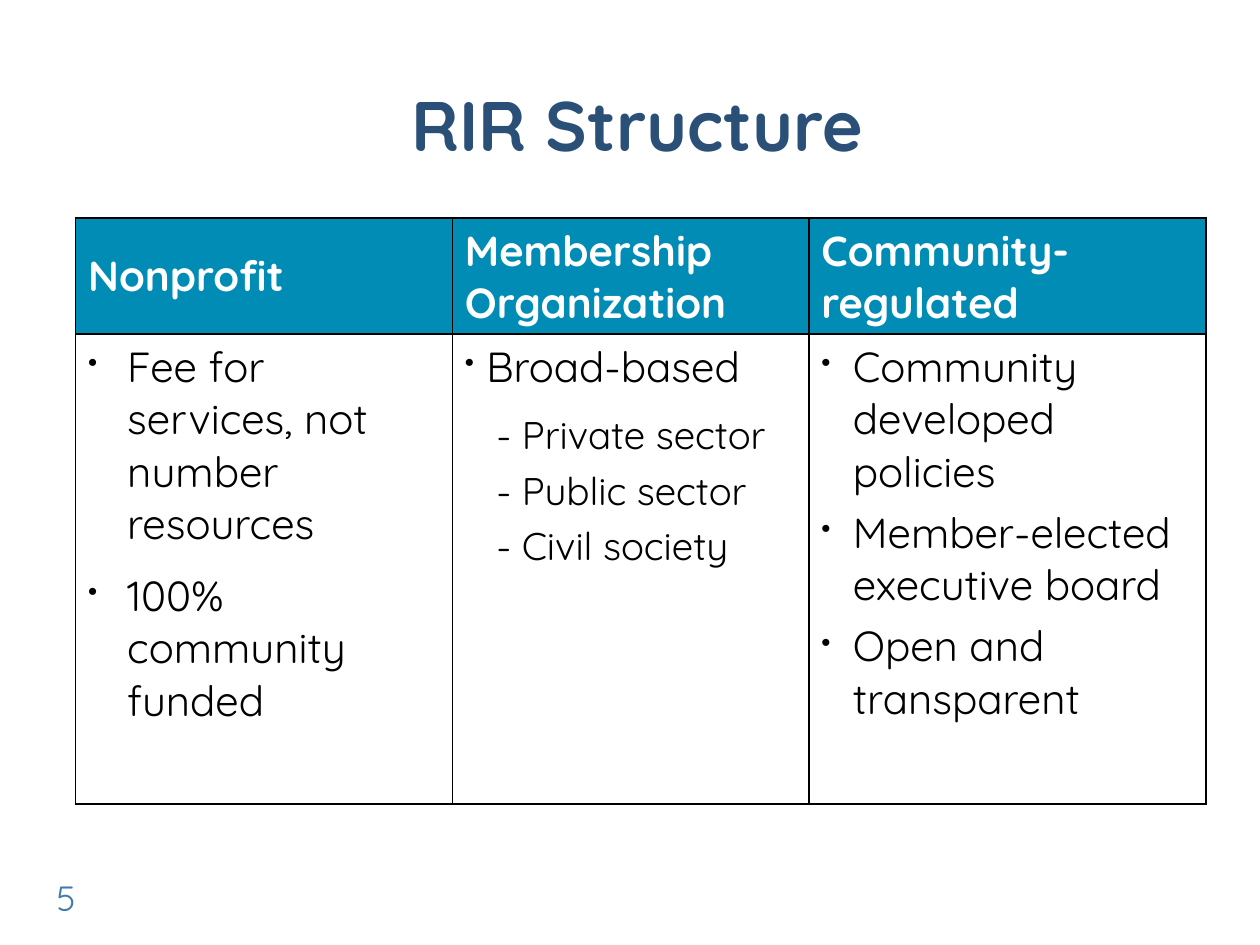
import pptx
import pptx.dml.color
import pptx.enum.text
import pptx.oxml.ns
import pptx.util
from lxml import etree

COLORS = {"title": "2B5078", "number": "407BAC", "header": "008CB5",
          "white": "FFFFFF", "black": "000000"}
HEADERS = ["Nonprofit", "Membership Organization", "Community-regulated"]
BODY = [
    [dict(text=t, hang=0.31, after=6, bullet=True) for t in
     ("Fee for services, not number resources", "100% community funded")],
    [dict(text="Broad-based", hang=0.17, after=6, bullet=True)]
    + [dict(text=f"- {t}", size=22, left=0.25) for t in
       ("Private sector", "Public sector", "Civil society")],
    [dict(text=t, hang=0.25, bullet=True) for t in
     ("Community developed policies", "Member-elected executive board",
      "Open and transparent")],
]


class Deck:
    """Style and current slide, measured on a grid of 100 columns by 75 rows."""

    font = "Quicksand"

    def __init__(self):
        self.prs = pptx.Presentation()
        self.prs.slide_width = pptx.util.Inches(10)
        self.prs.slide_height = pptx.util.Inches(7.5)
        self.s = self.prs.slides.add_slide(self.prs.slide_layouts[6])

    def cols(self, n):
        return round(self.prs.slide_width * n / 100)

    def rows(self, n):
        return round(self.prs.slide_height * n / 75)

    def box(self, x, y, w, h):
        return self.cols(x), self.rows(y), self.cols(w), self.rows(h)

    def rgb(self, name):
        return pptx.dml.color.RGBColor.from_string(COLORS[name])

    def run(self, p, text, size, color, bold=False):
        r = p.add_run()
        r.text = text
        r.font.name = self.font
        r.font.size = pptx.util.Pt(size)
        r.font.bold = bold
        r.font.color.rgb = self.rgb(color)

    def text(self, at, text, size, color, bold=False, align="LEFT", anchor="TOP"):
        tf = self.s.shapes.add_textbox(*self.box(*at)).text_frame
        tf.word_wrap = True
        tf.vertical_anchor = pptx.enum.text.MSO_ANCHOR[anchor]
        p = tf.paragraphs[0]
        p.alignment = pptx.enum.text.PP_ALIGN[align]
        self.run(p, text, size, color, bold)

    def paragraph(self, tf, first, text, size=24, left=0, hang=0, after=0, bullet=False):
        p = tf.paragraphs[0] if first else tf.add_paragraph()
        pPr = p._p.get_or_add_pPr()
        pPr.set("marL", str(pptx.util.Inches(left + hang)))
        pPr.set("indent", str(-pptx.util.Inches(hang)))
        if bullet:
            for tag, key, value in (("a:buSzPct", "val", "65000"),
                                    ("a:buChar", "char", "•")):
                etree.SubElement(pPr, pptx.oxml.ns.qn(tag)).set(key, value)
        if not first:
            p.space_before = pptx.util.Pt(size * 0.2)
        p.space_after = pptx.util.Pt(after)
        self.run(p, text, size, "black")

    def borders(self, cell):
        tcPr = cell._tc.get_or_add_tcPr()
        for i, side in enumerate(("lnL", "lnR", "lnT", "lnB")):
            ln = etree.Element(pptx.oxml.ns.qn(f"a:{side}"), w=str(pptx.util.Pt(1)))
            fill = etree.SubElement(ln, pptx.oxml.ns.qn("a:solidFill"))
            etree.SubElement(fill, pptx.oxml.ns.qn("a:srgbClr"), val=COLORS["black"])
            tcPr.insert(i, ln)

    def table(self, x, y, widths, heights, headers, body):
        at = self.box(x, y, sum(widths), sum(heights))
        table = self.s.shapes.add_table(2, len(headers), *at).table
        table.first_row = table.horz_banding = False
        for row, h in zip(table.rows, heights):
            row.height = self.rows(h)
        for i, (w, header, items) in enumerate(zip(widths, headers, body)):
            table.columns[i].width = self.cols(w)
            head, cell = table.cell(0, i), table.cell(1, i)
            head.fill.solid()
            head.fill.fore_color.rgb = self.rgb("header")
            head.vertical_anchor = pptx.enum.text.MSO_ANCHOR.MIDDLE
            self.run(head.text_frame.paragraphs[0], header, 24, "white", True)
            cell.fill.background()
            for j, item in enumerate(items):
                self.paragraph(cell.text_frame, j == 0, **item)
            self.borders(head)
            self.borders(cell)


def main():
    deck = Deck()
    deck.text((4.1, 1.8, 92.9, 16), "RIR Structure", 40, "title", True, "CENTER", "MIDDLE")
    deck.text((3.5, 69.1, 7.8, 4), "5", 20, "number")
    deck.table(6, 17.3, (29.9, 28.3, 31.5), (9.2, 37.3), HEADERS, BODY)
    deck.prs.save("out.pptx")


if __name__ == "__main__":
    main()
